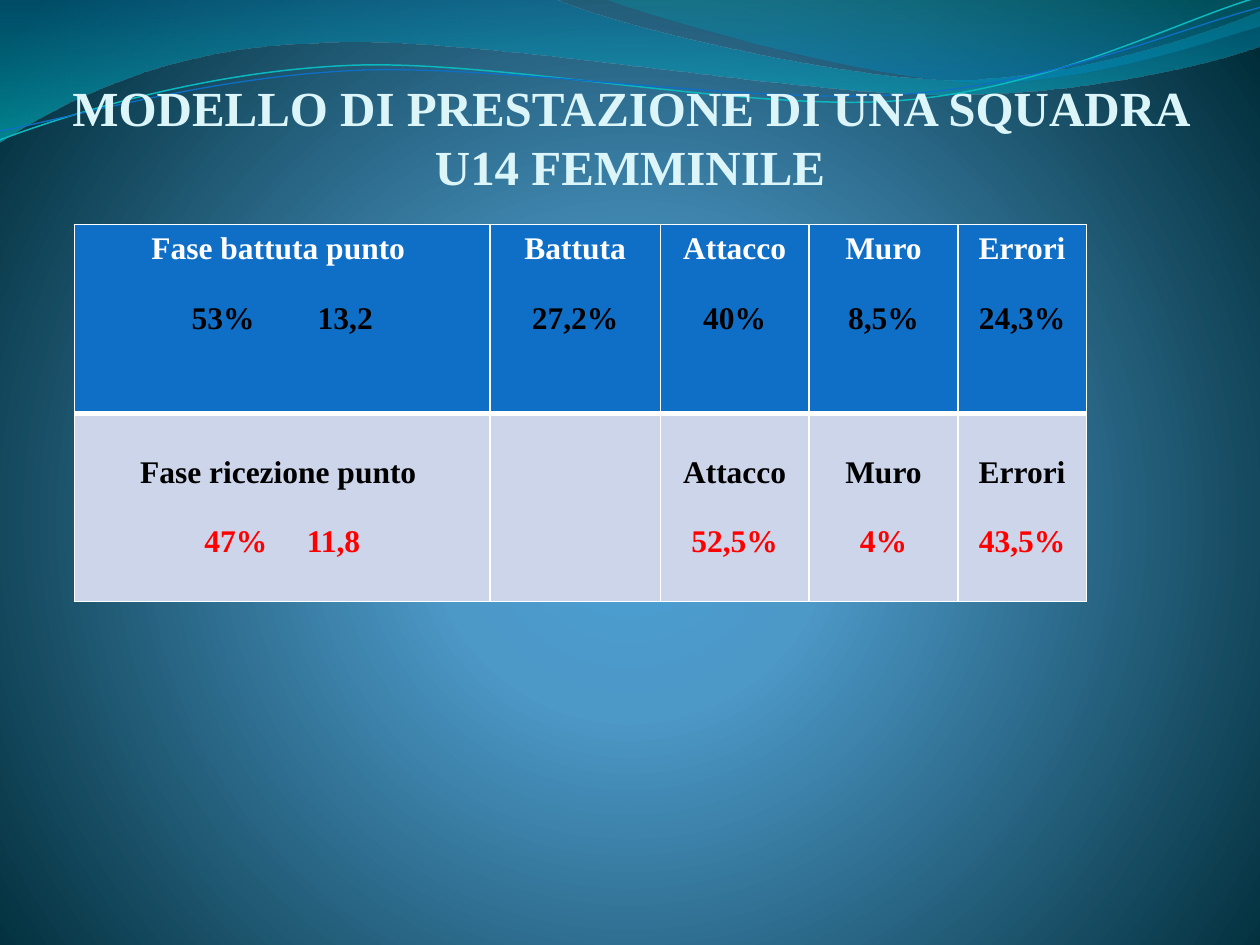
from math import cos, radians, sin

from lxml import etree
from pptx import Presentation
from pptx.dml.color import RGBColor
from pptx.enum.text import MSO_ANCHOR, PP_ALIGN
from pptx.oxml.ns import qn
from pptx.util import Cm, Pt

CENTER = PP_ALIGN.CENTER
BOTTOM = MSO_ANCHOR.BOTTOM
FONT = "Times New Roman"
WHITE, BLACK, RED, BLUE, PALE = "FFFFFF", "000000", "FF0000", "0F6FC6", "CCD5EA"

TITLE = "MODELLO DI PRESTAZIONE DI UNA SQUADRA U14 FEMMINILE"

# Each cell: heading, then one or two values
ROWS = [
    dict(fill=BLUE, heading=WHITE, value=BLACK, top=0.13, gap=31.5, borders=(1, 1, 1, 3),
         cells=[("Fase battuta punto ", "53%", "13,2"), ("Battuta", "27,2%"),
                ("Attacco", "40%"), ("Muro", "8,5%"), ("Errori", "24,3%")]),
    dict(fill=PALE, heading=BLACK, value=RED, top=0.84, gap=18, borders=(1, 1, 3, 1),
         cells=[("Fase ricezione punto ", "47%", "11,8"), (),
                ("Attacco", "52,5%"), ("Muro", "4%"), ("Errori", "43,5%")]),
]
COLUMN_WIDTHS = [8.38, 3.43, 3, 3, 2.59]
ROW_HEIGHT = 3.8

# Gradient stops: position %, colour, opacity %
BACKGROUND = [(0, "4AA0D6", 100), (25, "4C98C7", 100), (100, "002C38", 100)]

# Waves in cm: frame, then steps; a pair is straight, six numbers are a Bezier curve
BANDS = [
    ([(0, "0074A1", 45), (100, "00C6CF", 55)], (-0.03, -0.03, 25.45, 2.9),
     [(0, 0), (11.18, -0.03), (12.09, 0.43, 16.87, 1.6, 19.25, 1.6),
      (21.67, 1.6, 24.33, 0.66, 25.4, 0.23), (25.43, 0.91),
      (24.97, 1.12, 22.1, 1.93, 18.95, 1.9), (15.8, 1.9, 9.7, 0.71, 6.53, 0.86),
      (3.28, 0.91, 1.17, 2.11, -0.03, 2.87), (0, 0)]),
    ([(0, "00A1A9", 30), (80, "008BBF", 45)], (12.17, -0.03, 13.23, 1.78),
     [(12.17, -0.03), (12.93, 0.28, 17.32, 1.57, 19.53, 1.65),
      (21.74, 1.75, 24.41, 0.81, 25.4, 0.53), (25.4, 0), (12.17, -0.03)]),
]
LINES = [
    ("0AB8BF", 0.85, (-0.05, 0.56, 25.45, 1.8),
     [(0, 2.82), (1.22, 2.36, 4.01, 1.45, 7.04, 1.32),
      (10.03, 1.19, 15.06, 2.26, 18.11, 2.03), (21.16, 1.8, 23.83, 0.38, 25.35, -0.05)]),
    ("0F6FC6", 0.75, (-0.05, 0.76, 25.48, 1.47),
     [(0, 2.64), (1.19, 2.44, 4.17, 1.55, 7.19, 1.42),
      (10.24, 1.3, 15.16, 2.13, 18.21, 1.9), (21.23, 1.7, 23.9, 0.53, 25.4, 0.15)]),
]
LINE_TILT = -2.7


def color(value):
    return RGBColor.from_string(value)


def child(parent, tag, **attributes):
    return etree.SubElement(parent, qn(tag), {k: str(v) for k, v in attributes.items()})


def set_gradient(fill, root, stops, circle=False):
    """Replace the fill of root with a gradient."""
    fill.background()
    empty = root.find(".//" + qn("a:noFill"))
    gradient = etree.Element(qn("a:gradFill"), rotWithShape="1")
    stop_list = child(gradient, "a:gsLst")
    for position, value, opacity in stops:
        stop = child(stop_list, "a:gs", pos=position * 1000)
        shade = child(stop, "a:srgbClr", val=value)
        if opacity < 100:
            child(shade, "a:alpha", val=opacity * 1000)
    if circle:
        target = child(gradient, "a:path", path="circle")
        child(target, "a:fillToRect", l=10000, t=110000, r=10000, b=100000)
    else:
        child(gradient, "a:lin", ang=5400000, scaled=1)
    empty.getparent().replace(empty, gradient)


def add_wave(page, frame, steps, closed=False, tilt=0):
    """Add a curved outline; steps are given as they lie on the page."""
    left, top, width, height = frame
    turn = radians(-tilt)

    def place(x, y):
        dx, dy = x - left - width / 2, y - top - height / 2
        return (Cm(width / 2 + dx * cos(turn) - dy * sin(turn)),
                Cm(height / 2 + dx * sin(turn) + dy * cos(turn)))

    ends = [place(*step[-2:]) for step in steps]
    builder = page.shapes.build_freeform(*ends[0])
    builder.add_line_segments(ends[1:], close=closed)
    wave = builder.convert_to_shape()
    wave.left, wave.top, wave.width, wave.height = (Cm(v) for v in frame)
    wave.rotation = tilt
    wave.shadow.inherit = False

    # Turn the straight steps into curves
    outline = wave._element.find(".//" + qn("a:path"))
    for old in list(outline):
        outline.remove(old)
    outline.set("w", str(Cm(width)))
    outline.set("h", str(Cm(height)))
    for index, step in enumerate(steps):
        tag = "a:cubicBezTo" if len(step) == 6 else "a:lnTo" if index else "a:moveTo"
        part = child(outline, tag)
        for x, y in zip(step[::2], step[1::2]):
            px, py = place(x, y)
            child(part, "a:pt", x=px, y=py)
    if closed:
        child(outline, "a:close")
    return wave


def add_text(para, text, size=18, fill=WHITE, spacing=0):
    para.alignment = CENTER
    span = para.add_run()
    span.text = text
    span.font.name, span.font.size, span.font.bold = FONT, Pt(size), True
    span.font.color.rgb = color(fill)
    if spacing:
        span.font._element.set("spc", str(int(spacing * 100)))


def set_borders(cell, widths):
    properties = cell._tc.get_or_add_tcPr()
    for index, (side, width) in enumerate(zip("LRTB", widths)):
        line = etree.Element(qn("a:ln" + side), w=str(Pt(width)))
        child(child(line, "a:solidFill"), "a:srgbClr", val=WHITE)
        properties.insert(index, line)


def fill_cell(cell, texts, row):
    cell.fill.solid()
    cell.fill.fore_color.rgb = color(row["fill"])
    cell.margin_top = Cm(row["top"])
    set_borders(cell, row["borders"])
    if not texts:
        return
    heading, *values = texts
    frame = cell.text_frame
    add_text(frame.paragraphs[0], heading, fill=row["heading"])
    para = frame.add_paragraph()
    para.space_before = Pt(20)
    for index, value in enumerate(values):
        if index:
            add_text(para, " ", fill=row["value"], spacing=row["gap"])
        add_text(para, value, fill=row["value"])


def main():
    deck = Presentation()
    deck.slide_width, deck.slide_height = Cm(25.4), Cm(19.05)
    page = deck.slides.add_slide(deck.slide_layouts[6])

    # Background and waves
    set_gradient(page.background.fill, page._element, BACKGROUND, circle=True)
    for stops, frame, steps in BANDS:
        band = add_wave(page, frame, steps, closed=True)
        set_gradient(band.fill, band._element, stops)
        band.line.fill.background()
    for value, width, frame, steps in LINES:
        curve = add_wave(page, frame, steps, tilt=LINE_TILT)
        curve.fill.background()
        curve.line.color.rgb = color(value)
        curve.line.width = Pt(width)

    # Title
    box = page.shapes.add_textbox(Cm(1.27), Cm(0.76), Cm(22.86), Cm(3.18))
    frame = box.text_frame
    frame.word_wrap = True
    frame.vertical_anchor = BOTTOM
    frame.margin_left = frame.margin_right = frame.margin_bottom = 0
    add_text(frame.paragraphs[0], TITLE, size=28, fill="DBF5F9")

    # Performance table
    table = page.shapes.add_table(
        len(ROWS), len(COLUMN_WIDTHS), Cm(1.5), Cm(4.53),
        Cm(sum(COLUMN_WIDTHS)), Cm(ROW_HEIGHT * len(ROWS))).table
    for column, width in zip(table.columns, COLUMN_WIDTHS):
        column.width = Cm(width)
    for r, row in enumerate(ROWS):
        table.rows[r].height = Cm(ROW_HEIGHT)
        for c, texts in enumerate(row["cells"]):
            fill_cell(table.cell(r, c), texts, row)

    deck.save("out.pptx")


if __name__ == "__main__":
    main()
